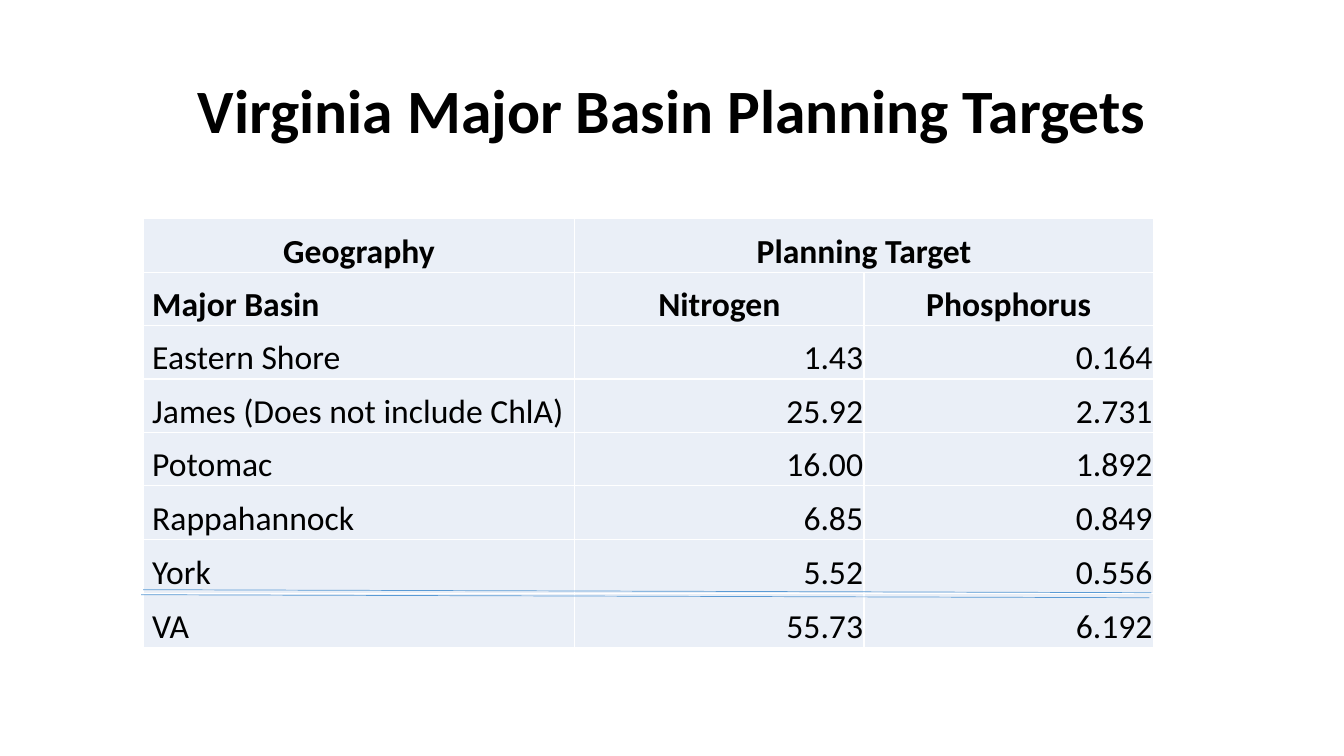
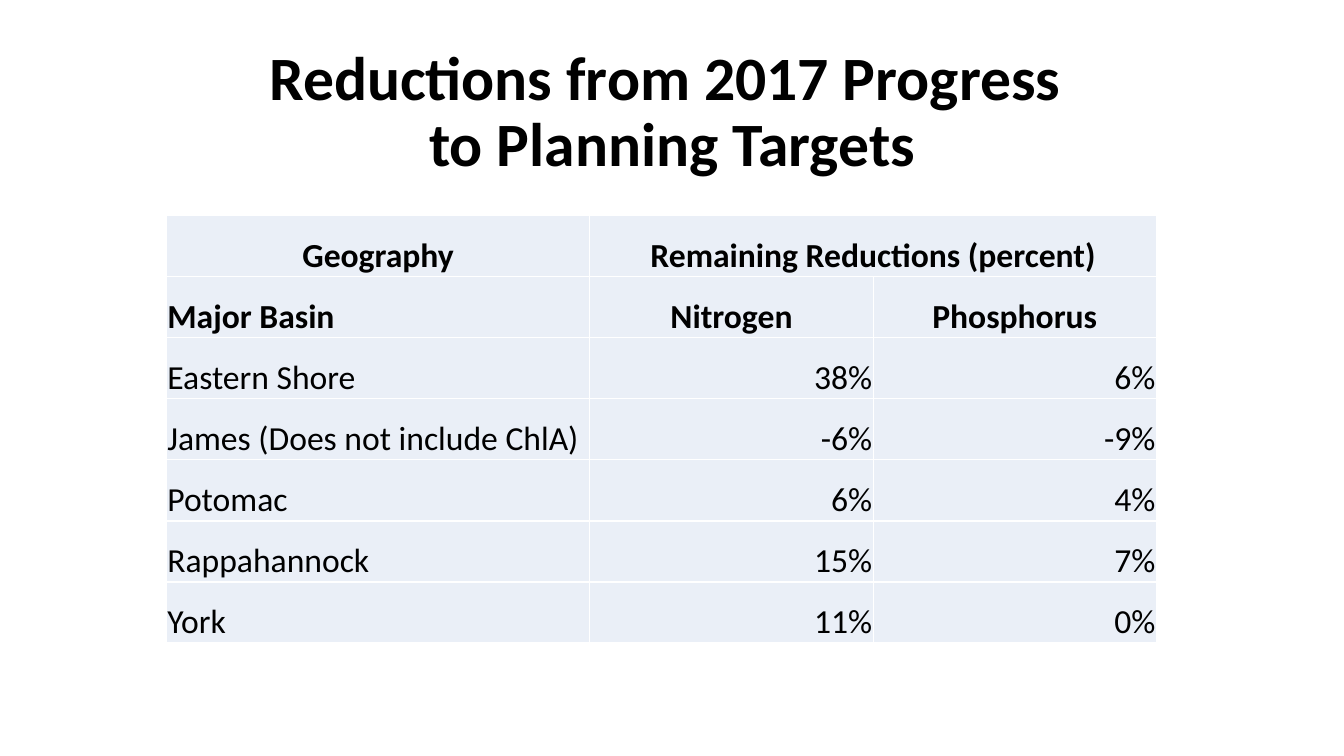
from lxml import etree
from pptx import Presentation
from pptx import util as u
from pptx.dml.color import RGBColor
from pptx.enum import shapes, text
from pptx.oxml.ns import qn

COLORS = {"text": "000000", "cell": "EAEFF7", "border": "FFFFFF", "rule": "5B9BD5"}
FONT = "Calibri"
LEFT, CENTER, RIGHT = text.PP_ALIGN.LEFT, text.PP_ALIGN.CENTER, text.PP_ALIGN.RIGHT


def style_paragraph(p, size, bold, align):
    p.alignment = align
    p.font.name = FONT
    p.font.size = u.Pt(size)
    p.font.bold = bold
    p.font.color.rgb = RGBColor.from_string(COLORS["text"])


def style_cell(cell, indent):
    cell.fill.solid()
    cell.fill.fore_color.rgb = RGBColor.from_string(COLORS["cell"])
    cell.vertical_anchor = text.MSO_ANCHOR.BOTTOM
    cell.margin_left = u.Inches(indent)
    cell.margin_right = cell.margin_top = u.Inches(0.01)
    cell.margin_bottom = 0
    # Borders go before the fill in the cell properties
    tcPr = cell._tc.get_or_add_tcPr()
    for i, side in enumerate(("lnL", "lnR", "lnT", "lnB")):
        ln = etree.Element(qn("a:" + side), w=str(u.Pt(1)))
        fill = etree.SubElement(ln, qn("a:solidFill"))
        etree.SubElement(fill, qn("a:srgbClr"), val=COLORS["border"])
        tcPr.insert(i, ln)


# Content of the slides
slides = [
    {
        "title": "Virginia Major Basin Planning Targets",
        "heading": "Planning Target",
        "left": 1.42, "top": 2.17, "indent": 0.09,
        "cols": [4.28, 2.87, 2.87],
        "rows": [0.53] * 6 + [0.54] * 2,
        "data": [
            ("Eastern Shore", "1.43", "0.164"),
            ("James (Does not include ChlA)", "25.92", "2.731"),
            ("Potomac", "16.00", "1.892"),
            ("Rappahannock", "6.85", "0.849"),
            ("York", "5.52", "0.556"),
            ("VA", "55.73", "6.192"),
        ],
        "rules": [(1.4, 5.9), (1.42, 5.85)],
    },
    {
        "title": "Reductions from 2017 Progress \vto Planning Targets",
        "heading": "Remaining Reductions (percent)",
        "left": 1.65, "top": 2.14, "indent": 0.01,
        "cols": [4.2, 2.81, 2.81],
        "rows": [4.24 / 7] * 7,
        "data": [
            ("Eastern Shore", "38%", "6%"),
            ("James (Does not include ChlA)", "-6%", "-9%"),
            ("Potomac", "6%", "4%"),
            ("Rappahannock", "15%", "7%"),
            ("York", "11%", "0%"),
        ],
        "rules": [],
    },
]

prs = Presentation()
prs.slide_width, prs.slide_height = u.Inches(13.33), u.Inches(7.5)

for content in slides:
    s = prs.slides.add_slide(prs.slide_layouts[5])

    # Title
    title = s.shapes.title
    title.left, title.top = u.Inches(0.92), u.Inches(0.4)
    title.width, title.height = u.Inches(11.5), u.Inches(1.45)
    tf = title.text_frame
    tf.text = content["title"]
    tf.auto_size = text.MSO_AUTO_SIZE.NONE
    tf.vertical_anchor = text.MSO_ANCHOR.MIDDLE
    style_paragraph(tf.paragraphs[0], 44, True, CENTER)
    tf.paragraphs[0].line_spacing = 0.9

    # Table
    rows = [("Geography", content["heading"], ""),
            ("Major Basin", "Nitrogen", "Phosphorus")] + content["data"]
    table = s.shapes.add_table(
        len(rows), 3, u.Inches(content["left"]), u.Inches(content["top"]),
        u.Inches(sum(content["cols"])), u.Inches(sum(content["rows"]))).table
    table.first_row = table.horz_banding = False
    for column, width in zip(table.columns, content["cols"]):
        column.width = u.Inches(width)
    for row, height in zip(table.rows, content["rows"]):
        row.height = u.Inches(height)
    table.cell(0, 1).merge(table.cell(0, 2))

    for r, values in enumerate(rows):
        for c, value in enumerate(values):
            cell = table.cell(r, c)
            header = r < 2
            label = c == 0 and r > 0
            style_cell(cell, content["indent"] if label else 0.01)
            if cell.is_spanned:
                continue
            cell.text = value
            align = LEFT if label else CENTER if header else RIGHT
            style_paragraph(cell.text_frame.paragraphs[0], 24, header, align)

    # Double rule above the total
    for x, y in content["rules"]:
        rule = s.shapes.add_connector(
            shapes.MSO_CONNECTOR.STRAIGHT, u.Inches(x), u.Inches(y),
            u.Inches(x + 10), u.Inches(y + 0.03))
        rule.line.color.rgb = RGBColor.from_string(COLORS["rule"])
        rule.line.width = u.Pt(0.5)
        etree.SubElement(rule._element.spPr, qn("a:effectLst"))

prs.save("out.pptx")
